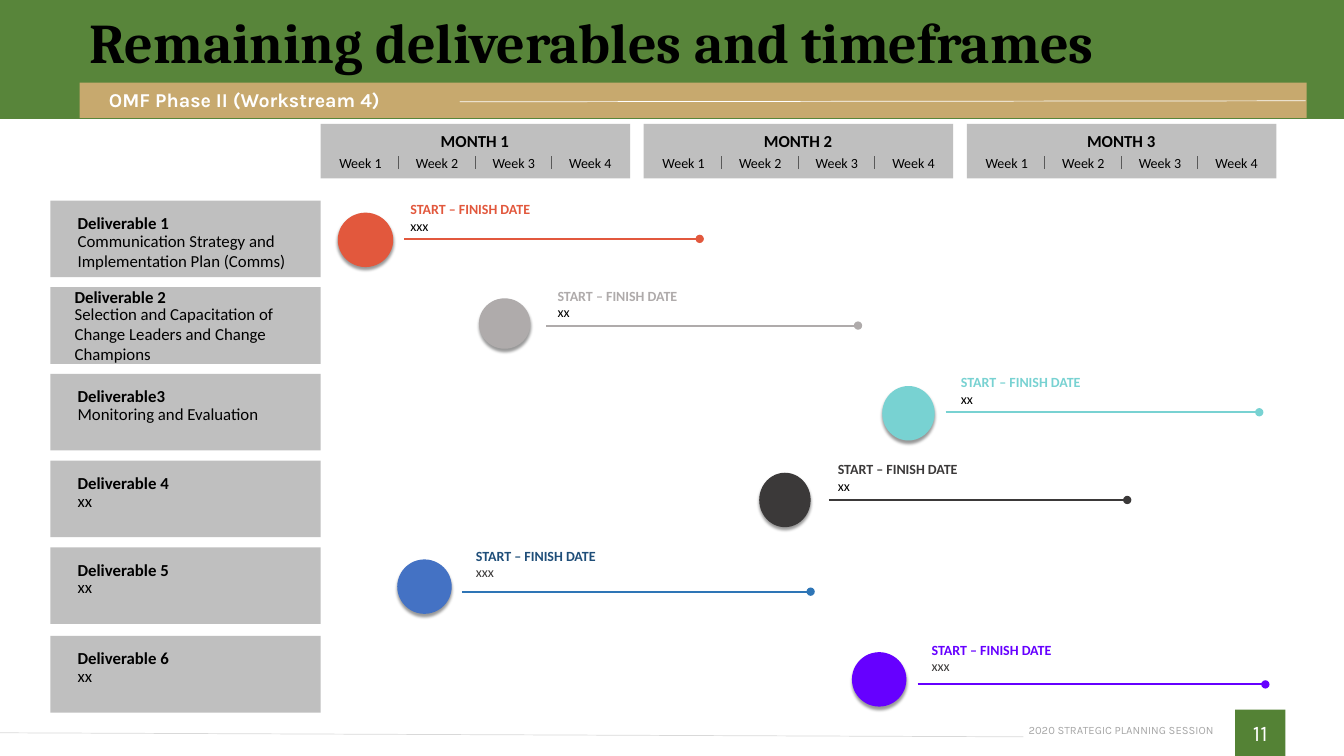
from collections import namedtuple

from lxml.etree import SubElement
from pptx import Presentation
from pptx.dml.color import RGBColor
from pptx.enum.shapes import MSO_CONNECTOR, MSO_SHAPE
from pptx.enum.text import MSO_ANCHOR, MSO_AUTO_SIZE, PP_ALIGN
from pptx.oxml.ns import qn
from pptx.util import Inches, Pt


class Theme:
    heading, label, body = "Cambria", "Karla", "Calibri"
    title, page, subtitle, normal, small, footer = 40, 16, 14, 12, 10, 8
    band, green, gold, panel = "58853A", "548235", "C7A96E", "BFBFBF"
    black, white, charcoal = "000000", "FFFFFF", "3B3939"
    divider, footer_grey, footer_line = "595959", "A6A6A6", "D9D9D9"
    red, grey, teal, purple = "E2583D", "AFABAB", "78D2D2", "6600FF"
    blue, line_blue, dark_blue = "4472C4", "2E75B6", "1F4E79"


# circle: x, offset from top, width, height; bar: x start, x end, offset from top
# date: x, offset from top; label: x, offset from top, width; colors: circle, bar, date, note
Row = namedtuple("Row", "top name task label circle bar date note colors")
LABEL = (0.77, 0.12, 2.14)
ROWS = [
    Row(1.99, "Deliverable 1", "Communication Strategy and Implementation Plan (Comms)", LABEL,
        (3.35, 0.12, 0.55, 0.54), (4.01, 6.94, 0.38), (4.07, 0), "xxx",
        (Theme.red, Theme.red, Theme.red, Theme.black)),
    Row(2.85, "Deliverable 2",
        "Selection and Capacitation of Change Leaders and Change Champions", (0.74, -0.01, 2.41),
        (4.75, 0.11, 0.51, 0.5), (5.42, 8.51, 0.38), (5.53, 0), "xx",
        (Theme.grey, Theme.grey, Theme.grey, Theme.black)),
    Row(3.71, "Deliverable3", "Monitoring and Evaluation", LABEL,
        (8.75, 0.12, 0.52, 0.54), (9.38, 12.49, 0.38), (9.53, 0), "xx",
        (Theme.teal, Theme.teal, Theme.teal, Theme.black)),
    Row(4.57, "Deliverable 4", "xx", LABEL,
        (7.53, 0.12, 0.51, 0.54), (8.22, 11.18, 0.39), (8.31, 0), "xx",
        (Theme.charcoal, Theme.charcoal, Theme.charcoal, Theme.black)),
    Row(5.43, "Deliverable 5", "xx", LABEL,
        (3.94, 0.12, 0.54, 0.54), (4.58, 8.04, 0.44), (4.72, 0), "xxx",
        (Theme.blue, Theme.line_blue, Theme.dark_blue, Theme.charcoal)),
    Row(6.31, "Deliverable 6", "xx", LABEL,
        (8.45, 0.16, 0.54, 0.54), (9.1, 12.55, 0.48), (9.24, 0.05), "xxx",
        (Theme.purple, Theme.purple, Theme.purple, Theme.charcoal)),
]

prs = Presentation()
prs.slide_width, prs.slide_height = Inches(13.33), Inches(7.5)
s = prs.slides.add_slide(prs.slide_layouts[5])


def write(place, text, size=Theme.small, font=Theme.body, color=Theme.black, bold=False,
          align=PP_ALIGN.LEFT, anchor=MSO_ANCHOR.TOP, inset=0):
    """Put text in a shape, or in a new text box when place is (x, y, w, h)."""
    shape = s.shapes.add_textbox(*map(Inches, place)) if isinstance(place, tuple) else place
    tf = shape.text_frame
    tf.word_wrap, tf.auto_size, tf.vertical_anchor = True, MSO_AUTO_SIZE.NONE, anchor
    tf.margin_left = tf.margin_right = Inches(inset)
    tf.margin_top = tf.margin_bottom = Inches(inset / 2)
    p = tf.paragraphs[0]
    p.alignment = align
    r = p.add_run()
    r.text = text
    r.font.size, r.font.name, r.font.bold = Pt(size), font, bold
    r.font.color.rgb = RGBColor.from_string(color)
    return p


def block(kind, place, color):
    """Add a flat shape without outline or shadow."""
    shape = s.shapes.add_shape(kind, *map(Inches, place))
    shape.fill.solid()
    shape.fill.fore_color.rgb = RGBColor.from_string(color)
    shape.line.fill.background()
    shape.shadow.inherit = False
    return shape


# Header
title = s.shapes.title
band = block(MSO_SHAPE.RECTANGLE, (0, 0, 13.33, 1.18), Theme.band)
title.element.addprevious(band.element)
title.left, title.top, title.width, title.height = map(Inches, (0.79, 0, 12.54, 0.9))
p = write(title, "Remaining deliverables and timeframes", size=Theme.title, font=Theme.heading,
          bold=True, anchor=MSO_ANCHOR.MIDDLE, inset=0.1)
p.line_spacing = 0.9
block(MSO_SHAPE.RECTANGLE, (0.79, 0.82, 12.17, 0.35), Theme.gold)
write((1.08, 0.87, 3.48, 0.24), "OMF Phase II (Workstream 4)", size=Theme.subtitle,
      font=Theme.label, color=Theme.white, bold=True, anchor=MSO_ANCHOR.MIDDLE)

# Footer
page = block(MSO_SHAPE.RECTANGLE, (12.25, 7.04, 0.5, 0.46), Theme.green)
write(page, "11", size=Theme.page, font=Theme.label, color=Theme.white,
      align=PP_ALIGN.CENTER, anchor=MSO_ANCHOR.MIDDLE)
write((10.15, 7.18, 1.89, 0.13), "2020 STRATEGIC PLANNING SESSION", size=Theme.footer,
      font=Theme.label, color=Theme.footer_grey, align=PP_ALIGN.RIGHT, anchor=MSO_ANCHOR.MIDDLE)

# Lines: x1, y1, x2, y2, color, width, round end
lines = [(4.56, 1.01, 12.95, 1, Theme.white, 0.5, False),
         (10.15, 7.31, 0, 7.27, Theme.footer_line, 0.5, False)]

# Calendar
for month in range(3):
    left = 3.18 + 3.205 * month
    block(MSO_SHAPE.RECTANGLE, (left, 1.23, 3.07, 0.54), Theme.panel)
    write((left + 0.97, 1.3, 1.12, 0.2), f"MONTH {month + 1}", size=Theme.normal, bold=True,
          align=PP_ALIGN.CENTER)
    for week in range(4):
        x = left + 0.07 + 0.76 * week
        write((x, 1.53, 0.65, 0.17), f"Week {week + 1}", align=PP_ALIGN.CENTER)
        if week < 3:
            lines.append((x + 0.7, 1.55, x + 0.7, 1.68, Theme.divider, 0.5, False))

# Deliverables
for row in ROWS:
    circle_color, bar_color, date_color, note_color = row.colors
    block(MSO_SHAPE.RECTANGLE, (0.5, row.top, 2.68, 0.76), Theme.panel)
    x, dy, w = row.label
    write((x, row.top + dy, 1.18, 0.2), row.name, size=Theme.normal, bold=True)
    write((x, row.top + dy + 0.175, w, 0.4), row.task, size=Theme.normal)

    x, dy, w, h = row.circle
    circle = block(MSO_SHAPE.OVAL, (x, row.top + dy, w, h), circle_color)
    effects = circle.element.spPr.find(qn("a:effectLst"))
    shadow = SubElement(effects, qn("a:outerShdw"), blurRad=str(Pt(2)), dist=str(Pt(2)),
                        dir="5400000", rotWithShape="0")
    shade = SubElement(shadow, qn("a:srgbClr"), val=Theme.black)
    SubElement(shade, qn("a:alpha"), val="40000")

    x1, x2, dy = row.bar
    lines.append((x1, row.top + dy, x2, row.top + dy, bar_color, 1.5, True))
    x, dy = row.date
    write((x, row.top + dy, 2.14, 0.17), "START – FINISH DATE", color=date_color, bold=True)
    write((x, row.top + dy + 0.165, 2.69, 0.17), row.note, color=note_color)

for x1, y1, x2, y2, color, width, round_end in lines:
    line = s.shapes.add_connector(MSO_CONNECTOR.STRAIGHT, *map(Inches, (x1, y1, x2, y2)))
    line.line.color.rgb = RGBColor.from_string(color)
    line.line.width = Pt(width)
    if round_end:
        SubElement(line.line._get_or_add_ln(), qn("a:tailEnd"), type="oval")
    SubElement(line.element.spPr, qn("a:effectLst"))

prs.save("out.pptx")
